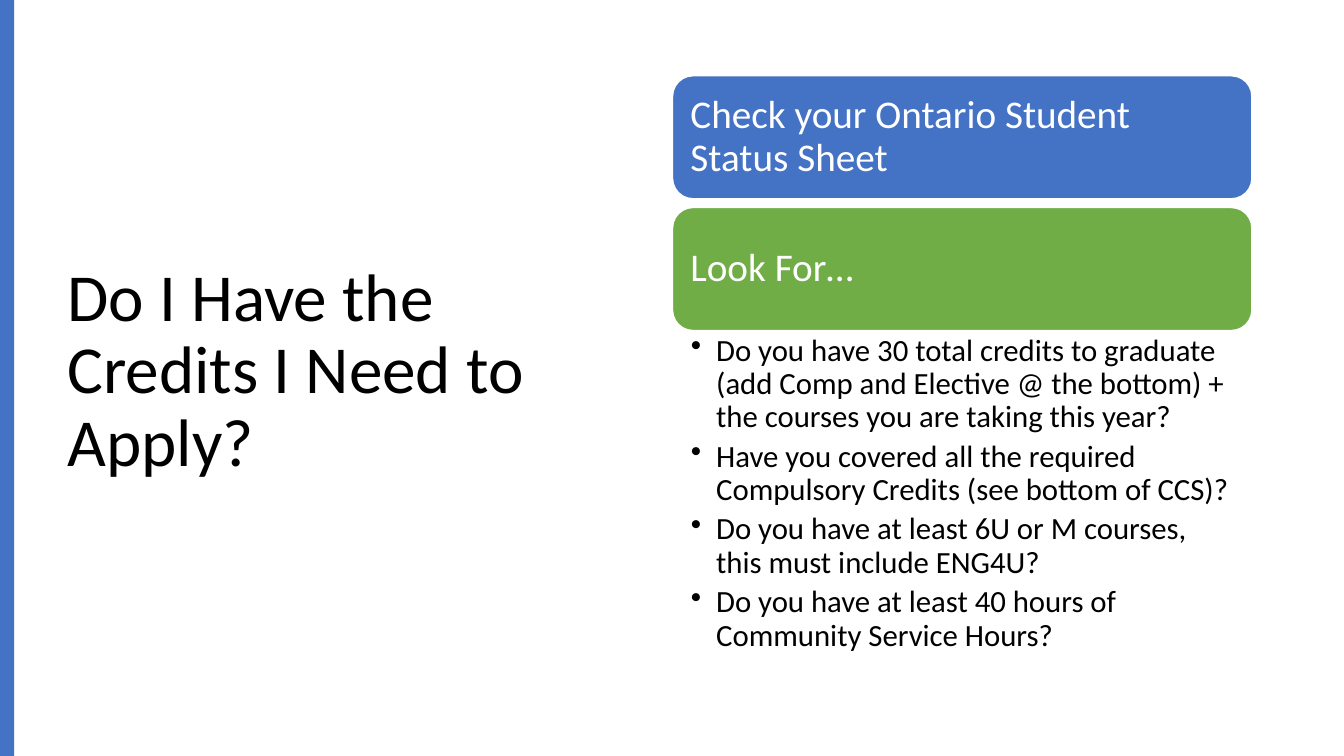
from dataclasses import dataclass

import pptx
import pptx.dml.color
import pptx.enum.shapes
import pptx.enum.text
import pptx.util
from lxml import etree
from pptx.util import Cm

RGB = pptx.dml.color.RGBColor
ANCHOR = pptx.enum.text.MSO_ANCHOR
SHAPE = pptx.enum.shapes.MSO_SHAPE


@dataclass(frozen=True)
class Theme:
    font: str = "Calibri"
    blue: RGB = RGB(0x44, 0x72, 0xC4)
    green: RGB = RGB(0x70, 0xAD, 0x47)
    white: RGB = RGB(0xFF, 0xFF, 0xFF)
    black: RGB = RGB(0, 0, 0)
    title_size: int = 48
    banner_size: int = 28
    question_size: int = 22


THEME = Theme()

TITLE = "Do I Have the Credits I Need to Apply?"
STEPS = [
    ("Check your Ontario Student Status Sheet", THEME.blue),
    ("Look For…", THEME.green),
]
QUESTIONS = [
    "Do you have 30 total credits to graduate (add Comp and Elective @ the bottom) "
    "+ the courses you are taking this year?",
    "Have you covered all the required Compulsory Credits (see bottom of CCS)?",
    "Do you have at least 6U or M courses, this must include ENG4U?",
    "Do you have at least 40 hours of Community Service Hours?",
]

# Right column, in centimetres
COLUMN_LEFT, COLUMN_TOP, COLUMN_WIDTH = 16.95, 1.91, 14.6
BANNER_HEIGHT, BANNER_PITCH = 3.1, 3.32


def set_insets(frame, left, top, right, bottom):
    frame.margin_left, frame.margin_top = Cm(left), Cm(top)
    frame.margin_right, frame.margin_bottom = Cm(right), Cm(bottom)


def write_paragraph(paragraph, text, size, color):
    paragraph.text = text
    paragraph.alignment = pptx.enum.text.PP_ALIGN.LEFT
    paragraph.line_spacing = 0.9
    paragraph.font.name = THEME.font
    paragraph.font.size = pptx.util.Pt(size)
    paragraph.font.color.rgb = color


def add_bullet(paragraph):
    properties = paragraph._p.get_or_add_pPr()
    properties.set("marL", str(Cm(0.64)))
    properties.set("indent", str(-Cm(0.64)))
    bullet = etree.SubElement(properties, pptx.oxml.ns.qn("a:buChar"))
    bullet.set("char", "•")


def add_block(slide, kind, left, top, width, height, fill):
    block = slide.shapes.add_shape(kind, Cm(left), Cm(top), Cm(width), Cm(height))
    block.shadow.inherit = False
    block.fill.solid()
    block.fill.fore_color.rgb = fill
    block.line.fill.background()
    return block


def add_text_frame(slide, left, top, width, height):
    box = slide.shapes.add_textbox(Cm(left), Cm(top), Cm(width), Cm(height))
    box.text_frame.word_wrap = True
    return box.text_frame


def add_title(slide):
    title = add_text_frame(slide, 1.45, 1.73, 14.4, 15.29)
    title.vertical_anchor = ANCHOR.MIDDLE
    write_paragraph(title.paragraphs[0], TITLE, THEME.title_size, THEME.black)


def add_banner(slide, top, text, fill):
    banner = add_block(slide, SHAPE.ROUNDED_RECTANGLE, COLUMN_LEFT, top,
                       COLUMN_WIDTH, BANNER_HEIGHT, fill)
    banner.line.color.rgb = THEME.white
    banner.line.width = pptx.util.Pt(1)
    label = banner.text_frame
    label.word_wrap = True
    label.vertical_anchor = ANCHOR.MIDDLE
    set_insets(label, 0.3, 0.3, 0.3, 0.3)
    write_paragraph(label.paragraphs[0], text, THEME.banner_size, THEME.white)


def add_questions(slide, top):
    checklist = add_text_frame(slide, COLUMN_LEFT, top, COLUMN_WIDTH, 8.53)
    set_insets(checklist, 0.46, 0.1, 0.56, 0.1)
    for index, question in enumerate(QUESTIONS):
        item = checklist.add_paragraph() if index else checklist.paragraphs[0]
        write_paragraph(item, question, THEME.question_size, THEME.black)
        item.space_after = pptx.util.Pt(4.5)
        add_bullet(item)


def main():
    deck = pptx.Presentation()
    deck.slide_width, deck.slide_height = Cm(33.87), Cm(19.05)
    slide = deck.slides.add_slide(deck.slide_layouts[6])

    # Title and accent bar on the left
    add_title(slide)
    add_block(slide, SHAPE.RECTANGLE, 0, 0, 0.36, 19.05, THEME.blue)

    # Steps with the checklist below them
    for index, (text, fill) in enumerate(STEPS):
        add_banner(slide, COLUMN_TOP + index * BANNER_PITCH, text, fill)
    last_banner_top = COLUMN_TOP + (len(STEPS) - 1) * BANNER_PITCH
    add_questions(slide, last_banner_top + BANNER_HEIGHT)

    deck.save("out.pptx")


if __name__ == "__main__":
    main()
